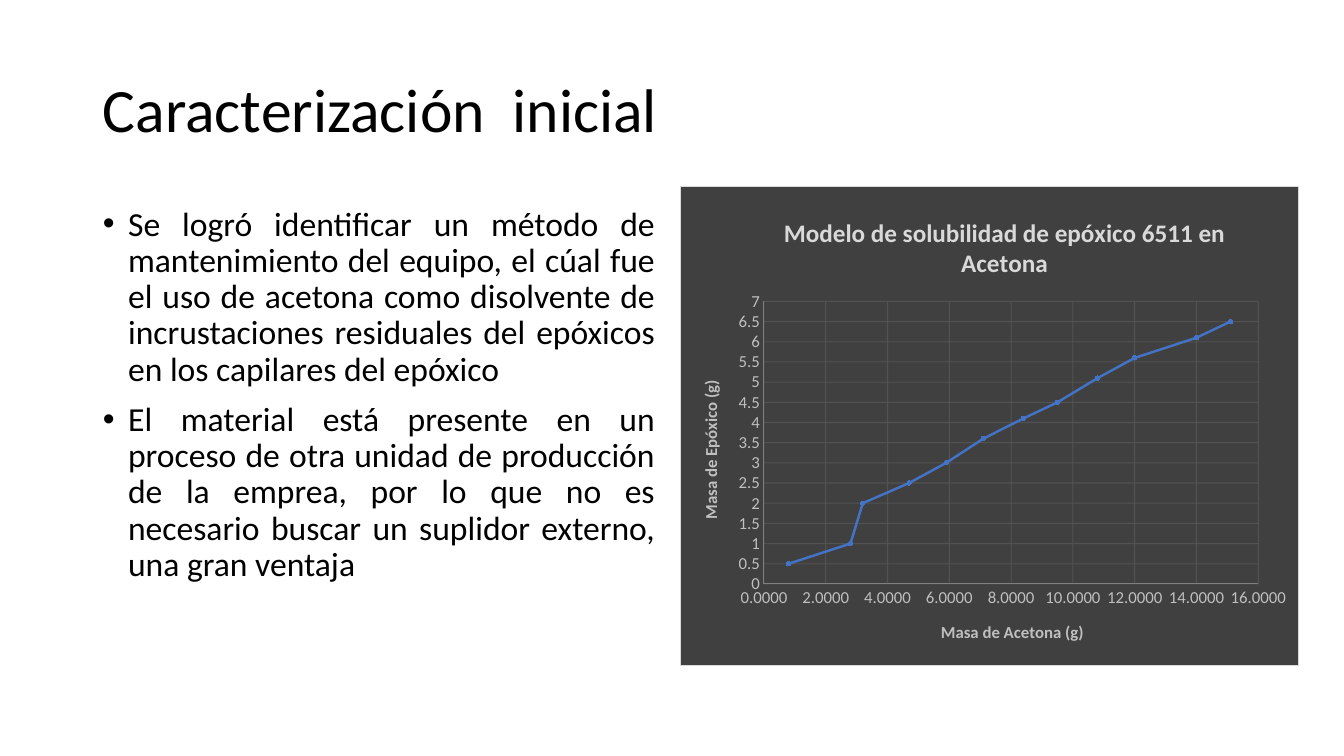
from lxml import etree
from pptx import Presentation
from pptx.chart.data import XyChartData
from pptx.dml.color import RGBColor
from pptx.enum.chart import XL_CHART_TYPE as ChartType, XL_MARKER_STYLE as MarkerStyle
from pptx.enum.chart import XL_TICK_MARK as TickMark
from pptx.enum.text import MSO_ANCHOR as Anchor, PP_ALIGN as Align
from pptx.oxml import parse_xml
from pptx.oxml.ns import nsdecls, qn
from pptx.util import Emu, Pt

PX = 914400 / 100.8
BLACK = RGBColor(0x00, 0x00, 0x00)
CHARCOAL = RGBColor(0x40, 0x40, 0x40)
GRID_GRAY = RGBColor(0x59, 0x59, 0x59)
AXIS_GRAY = RGBColor(0x80, 0x80, 0x80)
LABEL_GRAY = RGBColor(0xBF, 0xBF, 0xBF)
TITLE_GRAY = RGBColor(0xD9, 0xD9, 0xD9)
BLUE = RGBColor(0x44, 0x72, 0xC4)
FONT = "Calibri"


def px(*lengths):
    return [Emu(round(length * PX)) for length in lengths]


def write(paragraph, text, size, color, bold=False, align=None, spacing=None, before=None):
    run = paragraph.add_run()
    run.text = text
    run.font.name = FONT
    run.font.size = Pt(size)
    run.font.bold = bold
    run.font.color.rgb = color
    paragraph.alignment = align
    paragraph.line_spacing = spacing
    paragraph.space_before = before


prs = Presentation()
prs.slide_width, prs.slide_height = px(1344, 756)
slide = prs.slides.add_slide(prs.slide_layouts[6])

heading = slide.shapes.add_textbox(*px(93, 40, 1159, 146)).text_frame
heading.word_wrap = True
heading.vertical_anchor = Anchor.MIDDLE
write(heading.paragraphs[0], "Caracterización  inicial", 44, BLACK, spacing=0.9)

findings = [
    "Se logró identificar un método de mantenimiento del equipo, el cúal fue el uso de acetona "
    "como disolvente de incrustaciones residuales del epóxicos en los capilares del epóxico",
    "El material está presente en un proceso de otra unidad de producción de la emprea, "
    "por lo que no es necesario buscar un suplidor externo, una gran ventaja",
]
body = slide.shapes.add_textbox(*px(93, 202, 572, 480)).text_frame
body.word_wrap = True
for index, finding in enumerate(findings):
    item = body.add_paragraph() if index else body.paragraphs[0]
    write(item, finding, 24, BLACK, align=Align.JUSTIFY, spacing=0.9, before=Pt(10))
    item_format = item._p.get_or_add_pPr()
    item_format.set("marL", "228600")
    item_format.set("indent", "-228600")
    etree.SubElement(item_format, qn("a:buFont")).set("typeface", "Arial")
    etree.SubElement(item_format, qn("a:buChar")).set("char", "•")

acetone = [0.8, 2.8, 3.2, 4.7, 5.9, 7.1, 8.4, 9.5, 10.8, 12, 14, 15.1]
epoxy = [0.5, 1, 2, 2.5, 3, 3.6, 4.1, 4.5, 5.1, 5.6, 6.1, 6.5]
solubility = XyChartData()
points = solubility.add_series("Series 1")
for acetone_mass, epoxy_mass in zip(acetone, epoxy):
    points.add_data_point(acetone_mass, epoxy_mass)
chart = slide.shapes.add_chart(ChartType.XY_SCATTER_SMOOTH, *px(680, 186, 619, 480), solubility).chart
chart.has_legend = False
chart.font.name = FONT
chart.font.size = Pt(10)
write(chart.chart_title.text_frame.paragraphs[0],
      "Modelo de solubilidad de epóxico 6511 en Acetona", 18, TITLE_GRAY, bold=True)
chart.chart_title.include_in_layout = False

axes = [
    (chart.category_axis, "Masa de Acetona (g)", 16, 2, "0.0000"),
    (chart.value_axis, "Masa de Epóxico (g)", 7, 0.5, "General"),
]
for axis, caption, maximum, step, number_format in axes:
    write(axis.axis_title.text_frame.paragraphs[0], caption, 12, LABEL_GRAY, bold=True)
    axis.minimum_scale, axis.maximum_scale, axis.major_unit = 0, maximum, step
    axis.major_tick_mark = axis.minor_tick_mark = TickMark.NONE
    labels = axis.tick_labels
    labels.number_format = number_format
    labels.number_format_is_linked = False
    labels.font.name = FONT
    labels.font.size = Pt(12)
    labels.font.color.rgb = LABEL_GRAY
    axis.has_major_gridlines = True
    grid = axis.major_gridlines.format.line
    for line, color in ((axis.format.line, AXIS_GRAY), (grid, GRID_GRAY)):
        line.width = Pt(0.75)
        line.color.rgb = color
    grid_color = axis.major_gridlines._xAx.find(".//" + qn("c:majorGridlines")).find(".//" + qn("a:srgbClr"))
    etree.SubElement(grid_color, qn("a:alpha")).set("val", "75000")

curve = chart.plots[0].series[0]
chart.plots[0].vary_by_categories = False
curve.smooth = True
curve.format.line.color.rgb = BLUE
curve.format.line.width = Pt(1.75)
curve.marker.style = MarkerStyle.CIRCLE
curve.marker.size = 3
curve.marker.format.fill.solid()
curve.marker.format.fill.fore_color.rgb = BLUE
curve.marker.format.line.color.rgb = BLUE

chart_xml = chart._chartSpace.chart
layouts = [
    (chart_xml.find(qn("c:title")), {"x": 0.16, "y": 0.05}),
    (chart_xml.plotArea, {"x": 0.135, "y": 0.24, "w": 0.8, "h": 0.59}),
]
for part, places in layouts:
    for automatic in part.findall(qn("c:layout")):
        part.remove(automatic)
    target = '<c:layoutTarget val="inner"/>' if "w" in places else ""
    modes = "".join(f'<c:{side}Mode val="edge"/>' for side in "xy")
    sizes = "".join(f'<c:{side} val="{share}"/>' for side, share in places.items())
    layout = parse_xml(f'<c:layout {nsdecls("c")}><c:manualLayout>{target}{modes}{sizes}'
                       '</c:manualLayout></c:layout>')
    part.insert(0 if "w" in places else 1, layout)

panel = parse_xml(
    f'<c:spPr {nsdecls("c", "a")}><a:solidFill><a:srgbClr val="{CHARCOAL}"/></a:solidFill>'
    f'<a:ln w="9525"><a:solidFill><a:srgbClr val="{TITLE_GRAY}"/></a:solidFill></a:ln></c:spPr>')
chart_xml.addnext(panel)

prs.save("out.pptx")
